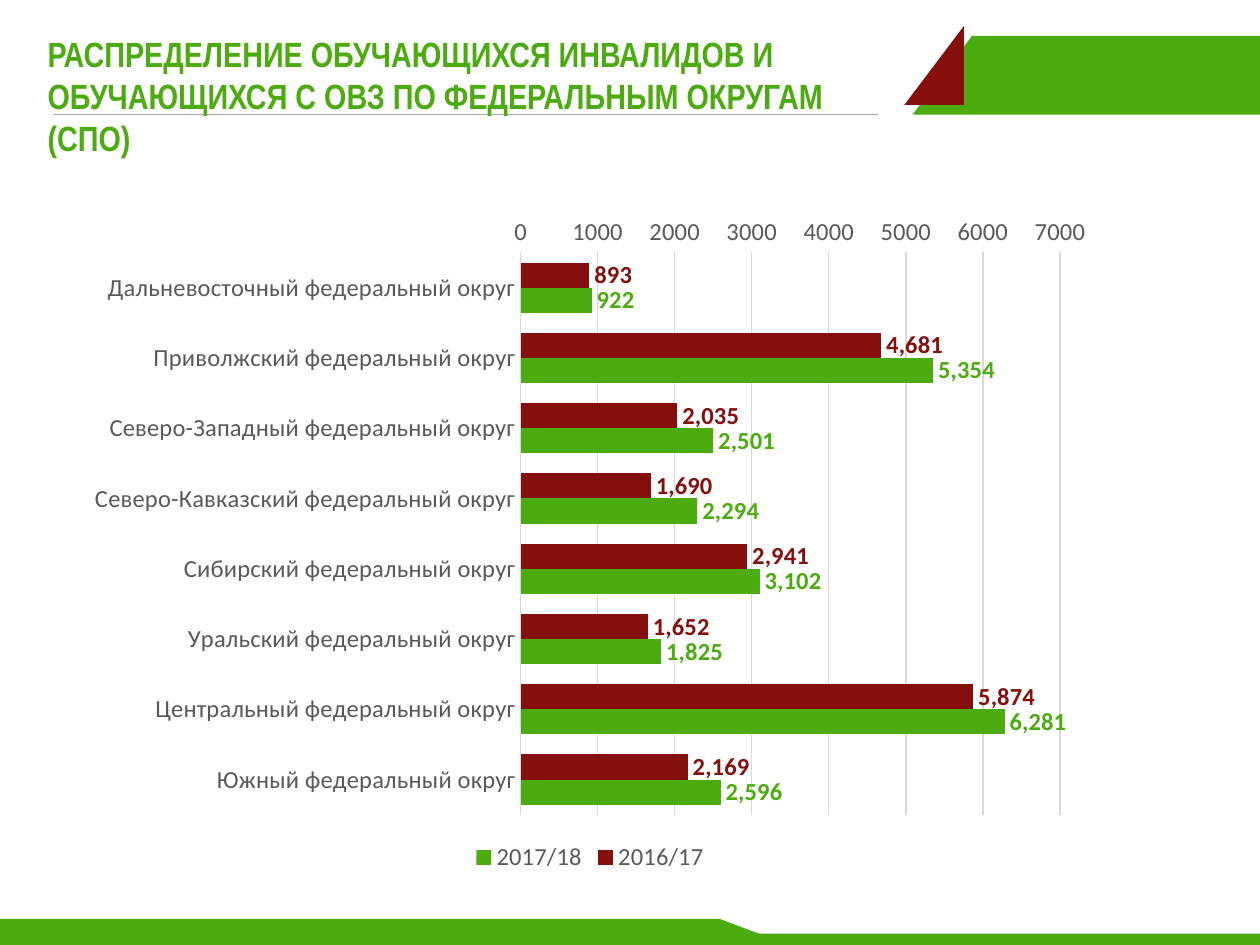
"""Build a slide with a bar chart of students by federal district."""
from dataclasses import dataclass

from lxml import etree
from pptx import Presentation
from pptx.chart.data import CategoryChartData
from pptx.dml.color import RGBColor
from pptx.enum.chart import (
    XL_CHART_TYPE, XL_LABEL_POSITION, XL_LEGEND_POSITION, XL_TICK_MARK)
from pptx.enum.shapes import MSO_CONNECTOR, MSO_SHAPE
from pptx.enum.text import MSO_ANCHOR, MSO_AUTO_SIZE, PP_ALIGN
from pptx.oxml.ns import qn
from pptx.util import Pt

BAR = XL_CHART_TYPE.BAR_CLUSTERED
OUT_END = XL_LABEL_POSITION.OUTSIDE_END
BOTTOM = XL_LEGEND_POSITION.BOTTOM
NO_TICK = XL_TICK_MARK.NONE
STRAIGHT = MSO_CONNECTOR.STRAIGHT
RECT = MSO_SHAPE.RECTANGLE
WEDGE = MSO_SHAPE.RIGHT_TRIANGLE
TOP = MSO_ANCHOR.TOP
NO_FIT = MSO_AUTO_SIZE.NONE
LEFT = PP_ALIGN.LEFT


@dataclass(frozen=True)
class Theme:
    green: str = "4BAB0F"
    red: str = "850F0D"
    text: str = "595959"
    grid: str = "D9D9D9"
    rule: str = "A6A6A6"
    head: str = "Arial Narrow"
    body: str = "Calibri"
    large: float = 20
    small: float = 14
    thin: float = 0.75


def apply(item, values):
    for name, value in values.items():
        setattr(item, name, value)


class Deck:
    def __init__(self, theme, wide, high):
        self.theme = theme
        self.file = Presentation()
        apply(self.file, {"slide_width": Pt(wide), "slide_height": Pt(high)})
        self.slide = self.file.slides.add_slide(self.file.slide_layouts[5])

    def font(self, font, color, size, name, bold=False):
        apply(font, {"size": Pt(size), "name": name, "bold": bold})
        font.color.rgb = RGBColor.from_string(color)

    def stroke(self, line, color):
        line.color.rgb = RGBColor.from_string(color)
        line.width = Pt(self.theme.thin)

    def line(self, x1, y1, x2, y2):
        line = self.slide.shapes.add_connector(
            STRAIGHT, Pt(x1), Pt(y1), Pt(x2), Pt(y2))
        self.stroke(line.line, self.theme.rule)
        etree.SubElement(line.element.spPr, qn("a:effectLst"))

    def shape(self, kind, box, color, flip=False):
        shape = self.slide.shapes.add_shape(kind, *map(Pt, box))
        shape.shadow.inherit = False
        shape.fill.solid()
        shape.fill.fore_color.rgb = RGBColor.from_string(color)
        shape.line.fill.background()
        if flip:
            shape.element.spPr.find(qn("a:xfrm")).set("flipH", "1")

    def title(self, text, box):
        title = self.slide.shapes.title
        apply(title, dict(zip(("left", "top", "width", "height"), map(Pt, box))))
        frame = title.text_frame
        frame.text = text
        apply(frame, {"word_wrap": True, "auto_size": NO_FIT, "vertical_anchor": TOP})
        part = frame.paragraphs[0]
        part.alignment = LEFT
        self.font(part.runs[0].font, self.theme.green, self.theme.large,
                  self.theme.head, True)
        self.slide.shapes.element.append(title.element)

    def chart(self, box, names, rows):
        theme = self.theme
        data = CategoryChartData(number_format="#,##0")
        data.categories = names
        for name, values, _ in rows:
            data.add_series(name, values)
        chart = self.slide.shapes.add_chart(BAR, *map(Pt, box), data).chart
        apply(chart, {"has_title": False, "has_legend": True})
        apply(chart.legend, {"position": BOTTOM, "include_in_layout": False})
        cats, scale = chart.category_axis, chart.value_axis
        for font in (chart.font, chart.legend.font,
                     cats.tick_labels.font, scale.tick_labels.font):
            self.font(font, theme.text, theme.small, theme.body)
        for axis in (cats, scale):
            apply(axis, {"major_tick_mark": NO_TICK, "minor_tick_mark": NO_TICK})
        cats.reverse_order = True
        self.stroke(cats.format.line, theme.grid)
        apply(scale, {"minimum_scale": 0, "maximum_scale": 7000,
                      "major_unit": 1000, "has_major_gridlines": True})
        apply(scale.tick_labels,
              {"number_format": "0", "number_format_is_linked": False})
        scale.format.line.fill.background()
        self.stroke(scale.major_gridlines.format.line, theme.grid)
        plot = chart.plots[0]
        apply(plot, {"gap_width": 80, "overlap": 0, "vary_by_categories": False})
        for bars, (_, _, color) in zip(plot.series, rows):
            bars.format.fill.solid()
            bars.format.fill.fore_color.rgb = RGBColor.from_string(color)
            labels = bars.data_labels
            apply(labels, {"show_value": True, "position": OUT_END,
                           "number_format": "#,##0",
                           "number_format_is_linked": False})
            self.font(labels.font, color, theme.small, theme.body, True)


def main():
    theme = Theme()
    deck = Deck(theme, 720, 540)
    deck.line(31, 65.5, 502, 65.5)
    for kind, box, color, flip in (
        (RECT, (555.5, 20.5, 164.5, 45), theme.green, False),
        (WEDGE, (521.5, 20.5, 34, 45), theme.green, True),
        (RECT, (0, 525, 411, 15), theme.green, False),
        (WEDGE, (411, 525, 40, 15), theme.green, False),
        (RECT, (173, 533.5, 547, 6.5), theme.green, False),
        (WEDGE, (516.75, 15, 34, 45), theme.red, True),
    ):
        deck.shape(kind, box, color, flip)
    deck.title("РАСПРЕДЕЛЕНИЕ ОБУЧАЮЩИХСЯ ИНВАЛИДОВ И ОБУЧАЮЩИХСЯ С ОВЗ "
               "ПО ФЕДЕРАЛЬНЫМ ОКРУГАМ (СПО)", (20, 15, 489, 90))
    zones = ("Дальневосточный", "Приволжский", "Северо-Западный",
             "Северо-Кавказский", "Сибирский", "Уральский", "Центральный", "Южный")
    deck.chart((42.5, 116.5, 589.5, 385),
               [f"{zone} федеральный округ" for zone in zones],
               (("2016/17", (893, 4681, 2035, 1690, 2941, 1652, 5874, 2169), theme.red),
                ("2017/18", (922, 5354, 2501, 2294, 3102, 1825, 6281, 2596), theme.green)))
    deck.file.save("out.pptx")


if __name__ == "__main__":
    main()
